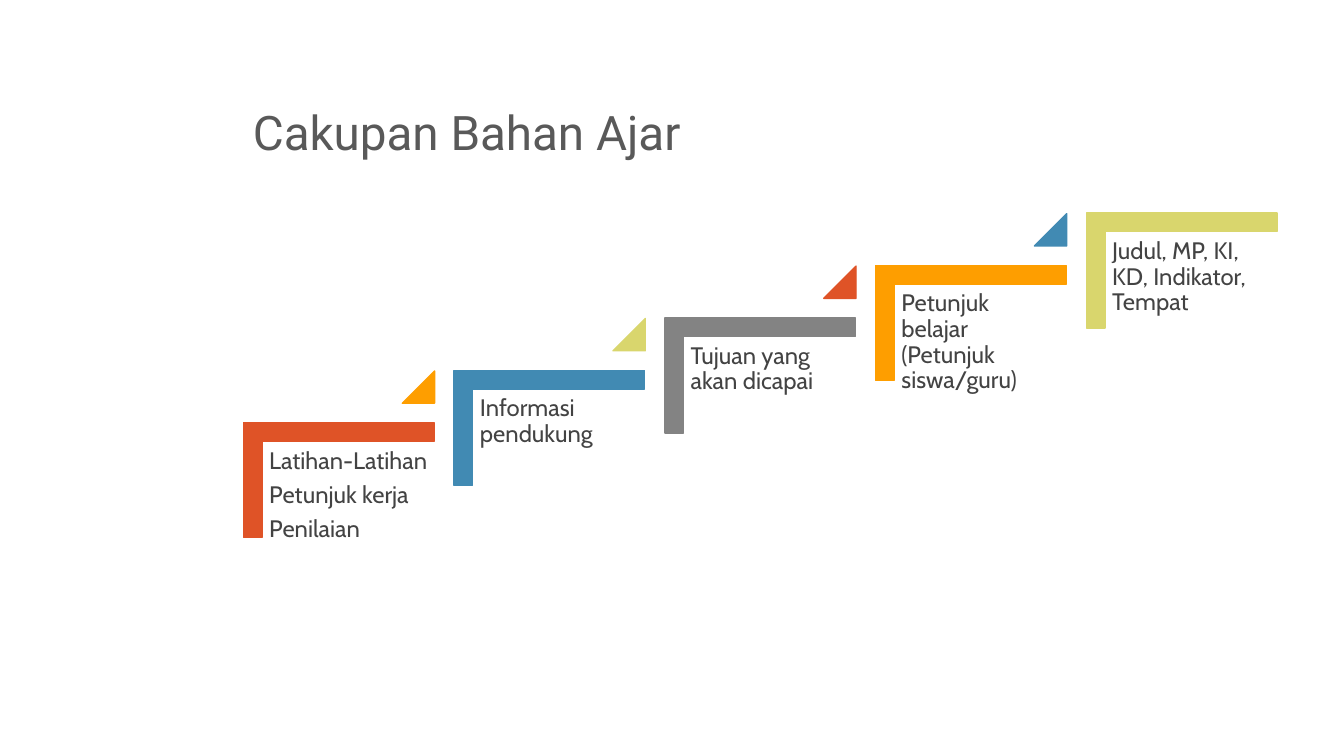
from pptx import Presentation
from pptx import util as u
from pptx.dml.color import RGBColor
from pptx.enum import shapes, text

RED, BLUE, GREY, ORANGE, LIME = "DF5327", "418AB3", "838383", "FE9E00", "D9D66D"

deck = Presentation()
deck.slide_width, deck.slide_height = u.Inches(13.33), u.Inches(7.5)
page = deck.slides.add_slide(deck.slide_layouts[6])


def add_text(place, lines, font, color, frame_format, space_after=0):
    box = page.shapes.add_textbox(*map(u.Inches, place))
    frame = box.text_frame
    frame.word_wrap = True
    for name, value in frame_format.items():
        setattr(frame, name, value)
    frame.text = "\n".join(lines)
    for para in frame.paragraphs:
        para.line_spacing = 0.9
        para.space_after = u.Pt(space_after)
        for name, value in font.items():
            setattr(para.font, name, value)
        para.font.color.rgb = RGBColor.from_string(color)


def add_block(kind, place, color, adjustments, rotation=0):
    block = page.shapes.add_shape(kind, *map(u.Inches, place))
    block.shadow.inherit = False
    block.rotation = rotation
    for index, value in enumerate(adjustments):
        block.adjustments[index] = value
    block.fill.solid()
    block.fill.fore_color.rgb = RGBColor.from_string(color)
    block.line.color.rgb = RGBColor.from_string(color)
    block.line.width = u.Pt(1)


add_text((2.41, 0.33, 10.25, 1.31), ["Cakupan Bahan Ajar"],
         {"name": "Roboto", "size": u.Pt(34)}, "595959",
         {"vertical_anchor": text.MSO_ANCHOR.BOTTOM})

steps = [
    (["Latihan-Latihan", "Petunjuk kerja", "Penilaian"], RED, ORANGE),
    (["Informasi pendukung"], BLUE, LIME),
    (["Tujuan yang akan dicapai"], GREY, RED),
    (["Petunjuk belajar (Petunjuk siswa/guru)"], ORANGE, BLUE),
    (["Judul, MP, KI, KD, Indikator, Tempat"], LIME, None),
]
step_width, step_rise = 2.09, 0.52
step_font = {"name": "Cabin", "size": u.Pt(17)}
margins = {f"margin_{side}": u.Inches(0.07) for side in ("left", "top", "right", "bottom")}

for number, (lines, corner_color, triangle_color) in enumerate(steps):
    left = 2.6 + number * step_width
    top = 4.38 - number * step_rise
    add_block(shapes.MSO_SHAPE.CORNER, (left + 0.19, top - 0.56, 1.14, 1.89),
              corner_color, (0.161, 0.161), rotation=90)
    add_text((left, top, 1.71, 1.5), lines, step_font, "434343", margins, space_after=6)
    if triangle_color:
        add_block(shapes.MSO_SHAPE.ISOSCELES_TRIANGLE, (left + 1.39, top - 0.7, 0.32, 0.32),
                  triangle_color, (1,))

deck.save("out.pptx")
